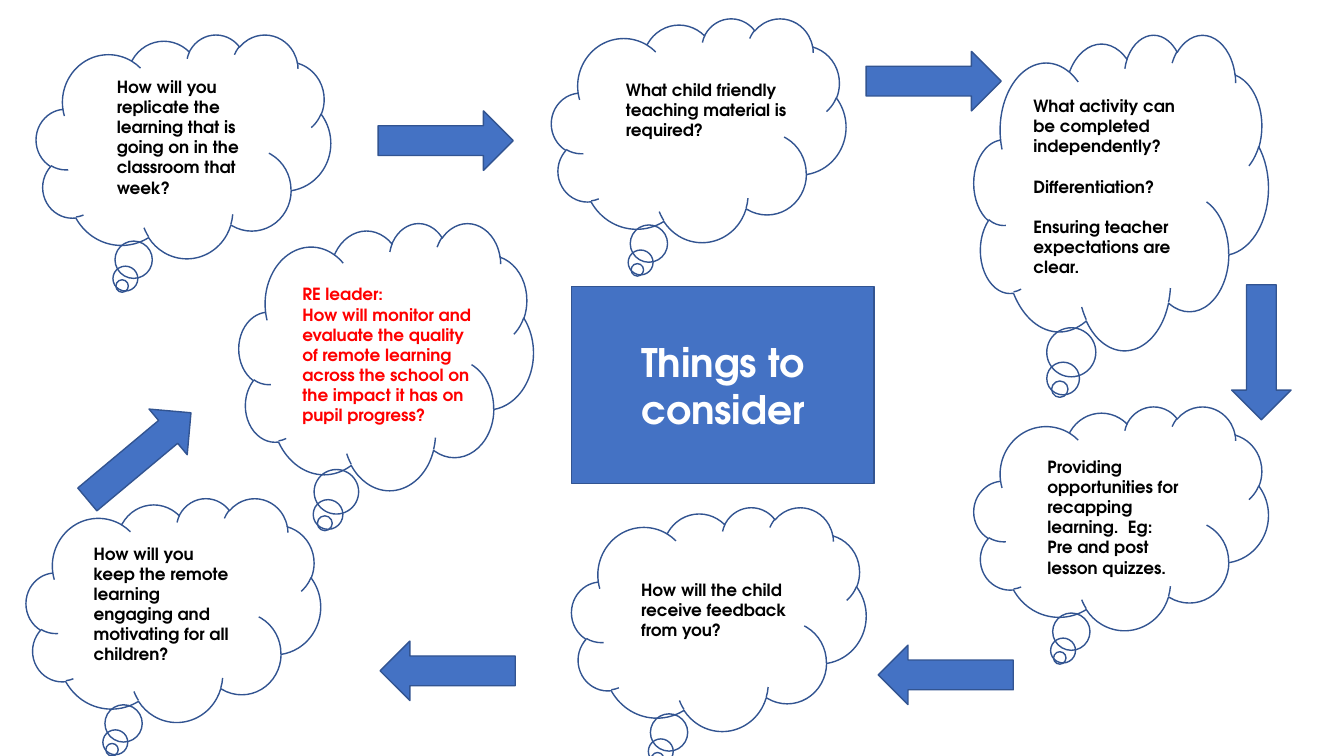
from dataclasses import dataclass

import pptx
import pptx.dml.color
import pptx.enum.shapes
import pptx.enum.text
import pptx.util

Inches = pptx.util.Inches
Pt = pptx.util.Pt
SHAPES = pptx.enum.shapes.MSO_SHAPE
FONT = "TeX Gyre Adventor"
COLORS = {"blue": "4472C4", "outline": "325491", "black": "000000",
          "red": "FF0000", "white": "FFFFFF"}
CLOUD_WIDTH = 2.92
ARROW_WIDTH, ARROW_HEIGHT = 1.34, 0.59
LINE_GAP = 14.4


@dataclass(frozen=True)
class Thought:
    cloud_left: float
    cloud_top: float
    text_left: float
    text_top: float
    text_width: float
    text_height: float
    paragraphs: tuple[str, ...]
    cloud_height: float = 2.22
    color: str = "black"
    gap: float = 0


@dataclass(frozen=True)
class Arrow:
    left: float
    top: float
    rotation: float = 0


THOUGHTS = (
    Thought(5.47, 0.18, 6.11, 0.74, 1.82, 0.71,
            ("What child friendly teaching material is required?",)),
    Thought(9.66, 0.34, 10.15, 0.9, 1.71, 1.92,
            ("What activity can be completed independently?",
             "Differentiation?",
             "Ensuring teacher expectations are clear."),
            cloud_height=3.13, gap=LINE_GAP),
    Thought(5.67, 5.03, 6.26, 5.7, 1.99, 0.71,
            ("How will the child receive feedback from you?",)),
    Thought(9.66, 4.03, 10.29, 4.48, 1.65, 1.31,
            ("Providing opportunities for recapping learning.  Eg:",
             "Pre and post lesson quizzes.")),
    Thought(0.26, 4.94, 0.83, 5.34, 1.6, 1.31,
            ("How will you keep the remote learning engaging and motivating for all children?",)),
    Thought(0.36, 0.34, 1.06, 0.71, 1.59, 1.31,
            ("How will you replicate the learning that is going on in the classroom that week?",)),
    Thought(2.37, 2.21, 2.9, 2.77, 1.91, 1.51,
            ("RE leader:",
             "How will monitor and evaluate the quality of remote learning across the school "
             "on the impact it has on pupil progress?"),
            cloud_height=2.65, color="red"),
)

ARROWS = (
    Arrow(3.75, 1.1),
    Arrow(8.59, 0.51),
    Arrow(11.84, 3.2, 90),
    Arrow(8.71, 6.4, 180),
    Arrow(3.77, 6.36, 180),
    Arrow(0.71, 4.23, 320.1),
)


def rgb(name: str) -> pptx.dml.color.RGBColor:
    return pptx.dml.color.RGBColor.from_string(COLORS[name])


def write_text(frame, paragraphs: tuple[str, ...], *, size: float = 12,
               color: str = "black", gap: float = 0, align=None, anchor=None) -> None:
    frame.word_wrap = True
    frame.auto_size = pptx.enum.text.MSO_AUTO_SIZE.NONE
    if anchor is not None:
        frame.vertical_anchor = anchor
    for index, text in enumerate(paragraphs):
        paragraph = frame.add_paragraph() if index else frame.paragraphs[0]
        if align is not None:
            paragraph.alignment = align
        if index and gap:
            paragraph.space_before = Pt(gap)
        run = paragraph.add_run()
        run.text = text
        run.font.name = FONT
        run.font.size = Pt(size)
        run.font.bold = True
        run.font.color.rgb = rgb(color)


def paint(shape, fill: str | None = None) -> None:
    if fill:
        shape.fill.solid()
        shape.fill.fore_color.rgb = rgb(fill)
    else:
        shape.fill.background()
    shape.line.color.rgb = rgb("outline")
    shape.line.width = Pt(1)


def draw_title(slide) -> None:
    title = slide.shapes.title
    title.left, title.top = Inches(5.67), Inches(2.84)
    title.width, title.height = Inches(3), Inches(1.96)
    paint(title, "blue")
    write_text(title.text_frame, ("Things to consider",), size=28, color="white",
               align=pptx.enum.text.PP_ALIGN.CENTER,
               anchor=pptx.enum.text.MSO_ANCHOR.MIDDLE)


def draw_cloud(slide, thought: Thought) -> None:
    cloud = slide.shapes.add_shape(
        SHAPES.CLOUD_CALLOUT, Inches(thought.cloud_left), Inches(thought.cloud_top),
        Inches(CLOUD_WIDTH), Inches(thought.cloud_height))
    cloud.shadow.inherit = False
    paint(cloud)


def draw_question(slide, thought: Thought) -> None:
    question = slide.shapes.add_textbox(
        Inches(thought.text_left), Inches(thought.text_top),
        Inches(thought.text_width), Inches(thought.text_height))
    write_text(question.text_frame, thought.paragraphs,
               color=thought.color, gap=thought.gap)


def draw_arrow(slide, step: Arrow) -> None:
    arrow = slide.shapes.add_shape(
        SHAPES.RIGHT_ARROW, Inches(step.left), Inches(step.top),
        Inches(ARROW_WIDTH), Inches(ARROW_HEIGHT))
    arrow.rotation = step.rotation
    arrow.shadow.inherit = False
    paint(arrow, "blue")


def main() -> None:
    deck = pptx.Presentation()
    deck.slide_width, deck.slide_height = Inches(13.33), Inches(7.5)
    slide = deck.slides.add_slide(deck.slide_layouts.get_by_name("Title Only"))
    draw_title(slide)
    for thought in THOUGHTS:
        draw_cloud(slide, thought)
    for thought in THOUGHTS:
        draw_question(slide, thought)
    for step in ARROWS:
        draw_arrow(slide, step)
    deck.save("out.pptx")


if __name__ == "__main__":
    main()
